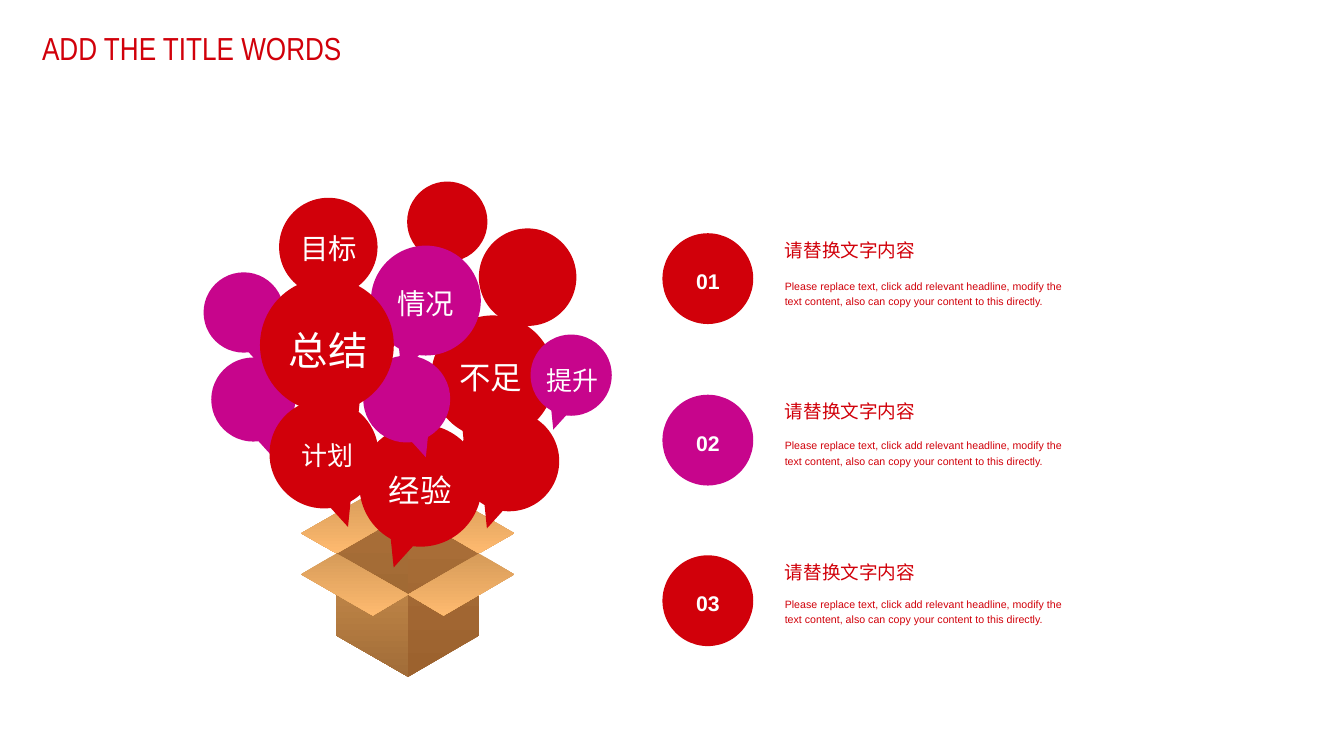
from pptx import Presentation
from pptx.dml.color import RGBColor
from pptx.enum.shapes import MSO_SHAPE as Shape
from pptx.enum.text import MSO_ANCHOR as Anchor, PP_ALIGN as Align
from pptx.util import Inches, Pt

RED = RGBColor(0xD1, 0x00, 0x0A)
PINK = RGBColor(0xC7, 0x05, 0x8C)
WHITE = RGBColor(0xFF, 0xFF, 0xFF)
SHADE = RGBColor(0xAA, 0x6F, 0x39)
INNER = RGBColor(0xA1, 0x6A, 0x34)
DARK = RGBColor(0x9C, 0x62, 0x2E)
SIDE = RGBColor(0xCB, 0x8F, 0x4D)
BASE = RGBColor(0xA1, 0x6C, 0x38)
TAN = RGBColor(0xD6, 0x9B, 0x59)
CREAM = RGBColor(0xFE, 0xBA, 0x6F)

# Corners of the carton
BACK, FRONT = (4.27, 5.36), (4.27, 6.22)
LEFT, RIGHT = (3.52, 5.79), (5.01, 5.79)
LOW_L, LOW_R, FOOT = (3.52, 6.65), (5.01, 6.65), (4.27, 7.08)

FACES = [
    ([BACK, LEFT, LOW_L, FOOT, LOW_R, RIGHT], SHADE, DARK),
    ([BACK, LEFT, FRONT], SHADE, INNER),
    ([(3.15, 5.58), LEFT, BACK, (3.9, 5.15)], TAN, CREAM),
    ([(5.38, 5.58), RIGHT, BACK, (4.64, 5.15)], TAN, CREAM),
    ([LEFT, LOW_L, FOOT, FRONT], SIDE, BASE),
    ([(3.15, 6.01), LEFT, FRONT, (3.9, 6.44)], TAN, CREAM),
    ([(5.38, 6.01), RIGHT, FRONT, (4.64, 6.44)], TAN, CREAM),
]

# left, top, diameter, colour, side of the tail (-1 left, 1 right)
BUBBLES = [
    (4.26, 1.9, 0.84, RED, -1),
    (3.76, 4.44, 1.28, RED, -1),
    (4.8, 4.3, 1.05, RED, -1),
    (4.51, 3.3, 1.29, RED, -1),
    (3.88, 2.57, 1.15, PINK, -1),
    (5.55, 3.5, 0.85, PINK, -1),
    (2.13, 2.85, 0.84, PINK, 1),
    (3.8, 3.72, 0.91, PINK, 1),
    (2.21, 3.74, 0.88, PINK, 1),
    (2.82, 4.18, 1.14, RED, 1),
    (2.72, 2.91, 1.4, RED, 1),
    (5.01, 2.39, 1.02, RED, -1),
    (2.92, 2.07, 1.03, RED, 1),
]

LABELS = [
    ("总结", 2.92, 3.26, 1.03, 0.65, 29.7),
    ("不足", 4.7, 3.62, 0.87, 0.54, 23.7),
    ("经验", 3.96, 4.8, 0.87, 0.54, 23.7),
    ("情况", 4.05, 2.87, 0.8, 0.49, 21.4),
    ("目标", 3.04, 2.3, 0.8, 0.49, 21.4),
    ("提升", 5.61, 3.7, 0.75, 0.46, 19.6),
    ("计划", 3.05, 4.48, 0.75, 0.46, 19.6),
]

# number, colour, top of the disc, top of the body text
ITEMS = [
    ("01", RED, 2.44, 2.9),
    ("02", PINK, 4.13, 4.57),
    ("03", RED, 5.81, 6.23),
]
HEAD = "请替换文字内容"
BODY = ("Please replace text, click add relevant headline, modify the "
        "text content, also can copy your content to this directly.")


def place(shape, x, y, w, h):
    shape.left, shape.top = Inches(x), Inches(y)
    shape.width, shape.height = Inches(w), Inches(h)


def write(shape, text, size, color=RED, font="Arial", bold=False, align=Align.LEFT,
          anchor=Anchor.TOP, space=1.2, wrap=True, inset=(0, 0)):
    """Put one paragraph in a shape; inset is (sides, top and bottom)."""
    frame = shape.text_frame
    frame.word_wrap = wrap
    frame.vertical_anchor = anchor
    frame.margin_left = frame.margin_right = Inches(inset[0])
    frame.margin_top = frame.margin_bottom = Inches(inset[1])
    para = frame.paragraphs[0]
    para.alignment, para.line_spacing = align, space
    run = para.add_run()
    run.text = text
    run.font.name, run.font.size = font, Pt(size)
    run.font.bold, run.font.color.rgb = bold, color


def add_text(slide, text, x, y, w, h, size, **form):
    box = slide.shapes.add_textbox(Inches(x), Inches(y), Inches(w), Inches(h))
    write(box, text, size, **form)


def add_face(slide, points, top, bottom):
    """Draw a side of the carton, shaded from top to bottom."""
    first, *rest = [(Inches(x), Inches(y)) for x, y in points]
    maker = slide.shapes.build_freeform(*first)
    maker.add_line_segments(rest, close=True)
    face = maker.convert_to_shape()
    face.shadow.inherit = False
    face.line.fill.background()
    face.fill.gradient()
    face.fill.gradient_angle = 270
    for stop, color in zip(face.fill.gradient_stops, (top, bottom)):
        stop.color.rgb = color


def add_round(slide, kind, x, y, size, color, adjust):
    """Draw a plain preset shape that is as wide as it is high."""
    shape = slide.shapes.add_shape(kind, Inches(x), Inches(y),
                                   Inches(size), Inches(size))
    for i, value in enumerate(adjust):
        shape.adjustments[i] = value
    shape.shadow.inherit = False
    shape.fill.solid()
    shape.fill.fore_color.rgb = color
    shape.line.fill.background()
    return shape


def main():
    deck = Presentation()
    deck.slide_width, deck.slide_height = Inches(14.06), Inches(7.91)
    slide = deck.slides.add_slide(deck.slide_layouts[5])

    title = slide.shapes.title
    place(title, 0.34, 0.05, 3.54, 0.63)
    write(title, "ADD THE TITLE WORDS", 24, font="Arial Narrow", space=1.5,
          inset=(0.1, 0.05))

    for face in FACES:
        add_face(slide, *face)
    for x, y, size, color, side in BUBBLES:
        add_round(slide, Shape.OVAL_CALLOUT, x, y, size, color, (side * 0.22, 0.67))
    for label in LABELS:
        add_text(slide, *label, color=WHITE, align=Align.CENTER, wrap=False,
                 inset=(0.1, 0.05))

    for num, color, top, low in ITEMS:
        disc = add_round(slide, Shape.ROUNDED_RECTANGLE, 6.93, top, 0.95, color, [0.5])
        write(disc, num, 16, color=WHITE, bold=True, align=Align.CENTER,
              anchor=Anchor.MIDDLE)
        add_text(slide, HEAD, 8.21, top - 0.01, 2.11, 0.32, 14,
                 anchor=Anchor.MIDDLE, inset=(0, 0.11))
        add_text(slide, BODY, 8.21, low, 3.05, 0.69, 8)

    deck.save("out.pptx")


if __name__ == "__main__":
    main()
